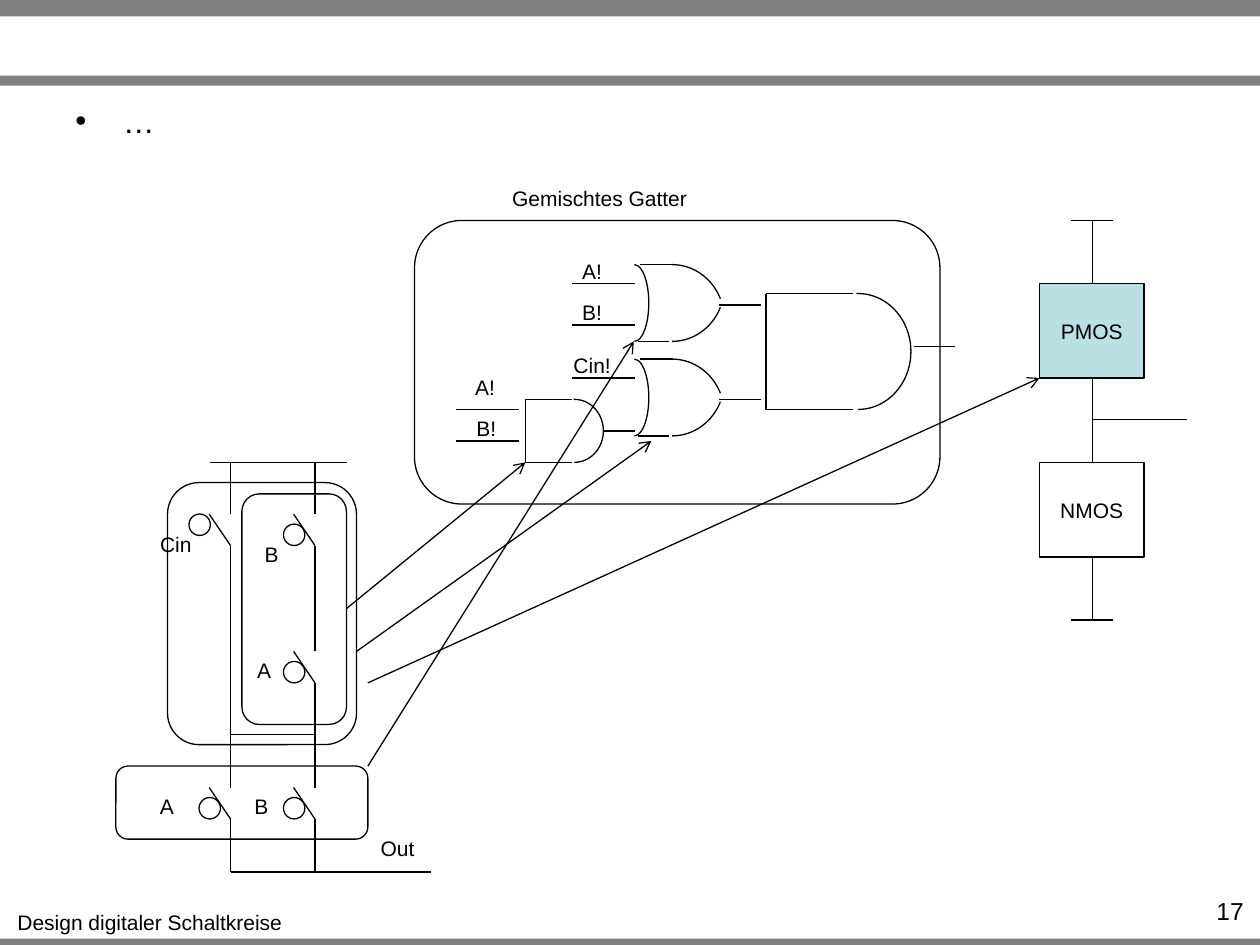
from dataclasses import dataclass

from pptx import Presentation
from pptx.dml.color import RGBColor
from pptx.enum.shapes import MSO_CONNECTOR, MSO_SHAPE
from pptx.enum.text import MSO_ANCHOR, PP_ALIGN
from pptx.oxml.ns import qn
from pptx.util import Inches, Pt
from lxml.etree import SubElement


@dataclass(frozen=True)
class Theme:
    ink: RGBColor = RGBColor(0x00, 0x00, 0x00)
    bar: RGBColor = RGBColor(0x80, 0x80, 0x80)
    pmos: RGBColor = RGBColor(0xBB, 0xE0, 0xE3)
    font: str = "Arial"
    label: int = 12
    page: int = 14
    body: int = 18
    stroke: float = 0.75


THEME = Theme()
QUARTER_TURN = 162


def write(frame, text, size=THEME.label, align=PP_ALIGN.CENTER):
    paragraph = frame.paragraphs[0]
    paragraph.alignment = align
    run = paragraph.add_run()
    run.text = text
    run.font.name = THEME.font
    run.font.size = Pt(size)
    run.font.color.rgb = THEME.ink
    return paragraph


def add_text(shapes, text, left, top, width, height=0.3, wrap=False, **style):
    box = shapes.add_textbox(Inches(left), Inches(top), Inches(width), Inches(height))
    box.text_frame.word_wrap = wrap
    return write(box.text_frame, text, **style)


def add_bullet(shapes, text, left, top, width, height):
    paragraph = add_text(shapes, text, left, top, width, height, wrap=True,
                         size=THEME.body, align=PP_ALIGN.LEFT)
    properties = paragraph._p.get_or_add_pPr()
    properties.set("marL", str(Inches(0.38)))
    properties.set("indent", str(Inches(-0.38)))
    SubElement(properties, qn("a:buFont"), typeface=THEME.font)
    SubElement(properties, qn("a:buChar"), char="•")


def add_outline(shapes, kind, left, top, width, height, fill=None, line=THEME.ink):
    shape = shapes.add_shape(kind, Inches(left), Inches(top), Inches(width), Inches(height))
    shape.shadow.inherit = False
    if fill is None:
        shape.fill.background()
    else:
        shape.fill.solid()
        shape.fill.fore_color.rgb = fill
    if line is None:
        shape.line.fill.background()
    else:
        shape.line.color.rgb = line
        shape.line.width = Pt(THEME.stroke)
    return shape


def add_wire(shapes, x1, y1, x2, y2, arrow=False):
    wire = shapes.add_connector(MSO_CONNECTOR.STRAIGHT, Inches(x1), Inches(y1),
                                Inches(x2), Inches(y2))
    wire.line.color.rgb = THEME.ink
    wire.line.width = Pt(THEME.stroke)
    if arrow:
        SubElement(wire.line._get_or_add_ln(), qn("a:tailEnd"), type="arrow")
    SubElement(wire._element.spPr, qn("a:effectLst"))


def add_arc(shapes, left, top, width, height, end, flipped=False):
    arc = add_outline(shapes, MSO_SHAPE.ARC, left, top, width, height)
    arc.adjustments[0] = QUARTER_TURN
    arc.adjustments[1] = end
    if flipped:
        arc._element.spPr.find(qn("a:xfrm")).set("flipV", "1")


def add_and_gate(shapes, left, top, edge, arc_left, arc_width, height):
    gate = shapes.add_group_shape().shapes
    for y in (top, top + height):
        add_wire(gate, left, y, left + edge, y)
    add_arc(gate, arc_left, top, arc_width, height, 54.9, flipped=True)
    add_wire(gate, left, top, left, top + height)


def add_or_gate(shapes, left, top):
    gate = shapes.add_group_shape().shapes
    add_arc(gate, left, top, 0.23, 0.61, 53.88)
    add_arc(gate, left, top, 0.83, 0.88, 201.69)
    add_arc(gate, left, top - 0.27, 0.83, 0.88, 201.69, flipped=True)
    add_wire(gate, left + 0.42, top, left + 0.16, top)
    add_wire(gate, left + 0.39, top + 0.61, left + 0.14, top + 0.61)


def add_switch(shapes, x, start, blade, end, contact_dx=-0.25, contact_dy=0.08):
    add_wire(shapes, x, start, x, blade)
    add_wire(shapes, x, blade + 0.25, x - 0.17, blade)
    add_wire(shapes, x, blade + 0.25, x, end)
    add_outline(shapes, MSO_SHAPE.OVAL, x + contact_dx, blade + contact_dy, 0.17, 0.17)


def add_transistor_block(shapes, name, top, fill=None):
    block = add_outline(shapes, MSO_SHAPE.RECTANGLE, 8.25, top, 0.83, 0.75, fill)
    block.text_frame.vertical_anchor = MSO_ANCHOR.MIDDLE
    write(block.text_frame, name)


def draw_page_frame(shapes):
    for top, height in ((7.45, 0.08), (0, 0.13), (0.6, 0.08)):
        add_outline(shapes, MSO_SHAPE.RECTANGLE, 0, top, 10, height, THEME.bar, None)
    add_text(shapes, "Design digitaler Schaltkreise", 0.03, 7.17, 2.32)
    add_bullet(shapes, "…", 0.5, 0.76, 9, 0.74)
    add_text(shapes, "17", 9.1, 7.06, 0.87, 0.24, wrap=True,
             size=THEME.page, align=PP_ALIGN.RIGHT)


def draw_mixed_gate(shapes):
    add_outline(shapes, MSO_SHAPE.ROUNDED_RECTANGLE, 3.29, 1.75, 4.17, 2.25)
    add_text(shapes, "Gemischtes Gatter", 3.96, 1.42, 1.6)
    for name, left, top, width in (("A!", 4.52, 2, 0.36), ("B!", 4.52, 2.33, 0.36),
                                   ("Cin!", 4.45, 2.75, 0.5), ("A!", 3.67, 2.92, 0.36),
                                   ("B!", 3.68, 3.25, 0.36)):
        add_text(shapes, name, left, top, width)
    for x, y, length in ((4.54, 2.25, 0.5), (4.54, 2.58, 0.5), (4.54, 3, 0.5),
                         (3.62, 3.25, 0.5), (3.62, 3.5, 0.5), (4.79, 3.42, 0.25),
                         (5.71, 2.42, 0.33), (5.71, 3.17, 0.33), (7.25, 2.75, 0.33)):
        add_wire(shapes, x, y, x + length, y)
    add_and_gate(shapes, 4.17, 3.17, 0.37, 4.33, 0.46, 0.5)
    add_and_gate(shapes, 6.08, 2.33, 0.69, 6.39, 0.84, 0.92)
    for top in (2.85, 2.1):
        add_or_gate(shapes, 4.92, top)


def draw_cmos_stage(shapes):
    add_transistor_block(shapes, "PMOS", 2.25, THEME.pmos)
    add_transistor_block(shapes, "NMOS", 3.67)
    for start, end in ((1.75, 2.25), (3, 3.67), (4.42, 4.92)):
        add_wire(shapes, 8.67, start, 8.67, end)
    for rail in (1.75, 4.92):
        add_wire(shapes, 8.5, rail, 8.83, rail)
    add_wire(shapes, 8.67, 3.33, 9.42, 3.33)


def draw_switch_network(shapes):
    left_branch, right_branch = 1.83, 2.5
    add_switch(shapes, left_branch, 3.67, 4.08, 5.83, contact_dx=-0.33, contact_dy=0)
    add_switch(shapes, right_branch, 3.67, 4.08, 4.75)
    add_switch(shapes, right_branch, 4.75, 5.17, 5.83)
    for branch in (left_branch, right_branch):
        add_switch(shapes, branch, 5.83, 6.25, 6.92)
    for start, end, y in ((1.67, 2.75, 3.67), (left_branch, right_branch, 5.83),
                          (left_branch, 3.42, 6.92)):
        add_wire(shapes, start, y, end, y)
    for name, left, top, width in (("Cin", 1.17, 4.17, 0.45), ("B", 2, 4.25, 0.31),
                                   ("A", 1.94, 5.17, 0.31), ("A", 1.17, 6.25, 0.31),
                                   ("B", 1.92, 6.25, 0.31), ("Out", 2.92, 6.58, 0.47)):
        add_text(shapes, name, left, top, width)
    for subnet in ((0.92, 6.08, 2, 0.58), (1.92, 3.92, 0.83, 1.83), (1.33, 3.83, 1.5, 2.08)):
        add_outline(shapes, MSO_SHAPE.ROUNDED_RECTANGLE, *subnet)


def draw_mappings(shapes):
    for mapping in ((2.92, 5.42, 8.25, 3), (2.92, 6.08, 5.03, 2.71),
                    (2.75, 4.83, 4.17, 3.67), (2.83, 5.17, 5.17, 3.5)):
        add_wire(shapes, *mapping, arrow=True)


def main():
    deck = Presentation()
    deck.slide_width, deck.slide_height = Inches(10), Inches(7.5)
    shapes = deck.slides.add_slide(deck.slide_layouts[6]).shapes
    draw_page_frame(shapes)
    draw_mixed_gate(shapes)
    draw_cmos_stage(shapes)
    draw_switch_network(shapes)
    draw_mappings(shapes)
    deck.save("out.pptx")


if __name__ == "__main__":
    main()
